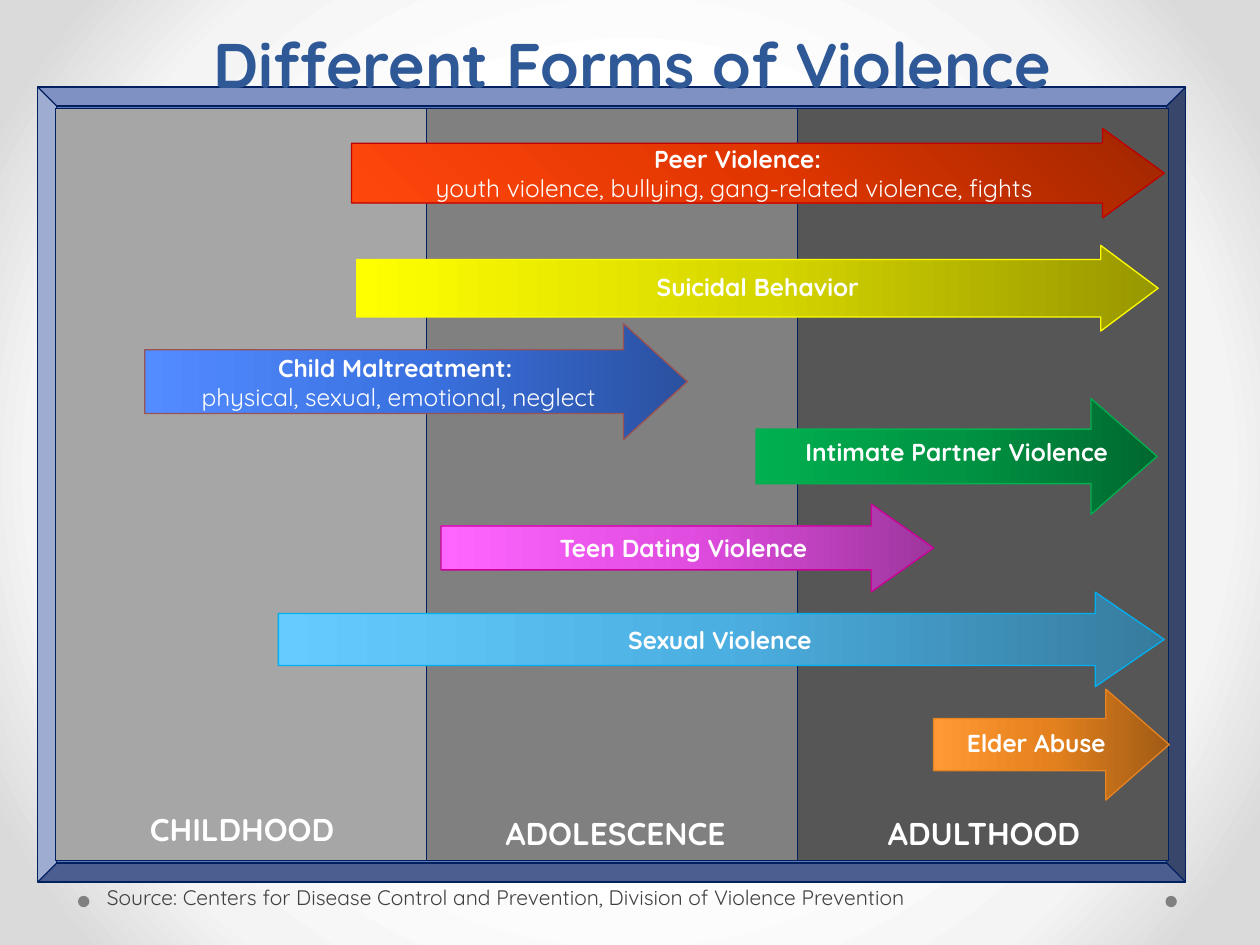
from lxml.etree import SubElement
from pptx import Presentation
from pptx.dml.color import RGBColor
from pptx.enum.shapes import MSO_SHAPE
from pptx.enum.text import MSO_ANCHOR, PP_ALIGN
from pptx.oxml.ns import qn
from pptx.util import Pt

FONT = "Quicksand"
C = {"title": "2F5897", "navy": "002060", "frame": "6076B4", "white": "FFFFFF",
     "source": "404040", "dot": "808080"}

TITLE = "Different Forms of Violence"
SOURCE = ("Source: Centers for Disease Control and Prevention, "
          "Division of Violence Prevention")
BACKGROUND = [(50, "FFFFFF"), (76, "F4F4F4"), (92, "DADADA")]

# Life stages: name, panel colour, label box
STAGES = [
    ("CHILDHOOD", "A6A6A6", (45.4, 459.4, 185.8, 28.8)),
    ("ADOLESCENCE", "808080", (247.7, 461.5, 208, 28.8)),
    ("ADULTHOOD", "565656", (469.4, 461.5, 185.8, 28.8)),
]

# Forms of violence: heading, detail, arrow box, adjustments,
# gradient from head to tail, outline, label box
FORMS = [
    ("Peer Violence:", "youth violence, bullying, gang-related violence, fights ",
     (200.9, 73.4, 464.4, 51.1), (0.67, 0.69),
     ("9F2600", "E23600", "FF470D"), "C00000", (200.9, 78.5, 441.4, 41)),
    ("Suicidal Behavior", None,
     (203.8, 140.2, 458, 49), (0.67, 0.67),
     ("979700", "D7D700", "FFFF00"), "FFFF00", (295.2, 152, 275.8, 24)),
    ("Child Maltreatment: ", "physical, sexual, emotional, neglect",
     (82.8, 185, 310, 66.2), (0.55, 0.55),
     ("2A509F", "3B72E2", "538CFF"), "9C5252", (90, 198, 275.8, 41)),
    ("Intimate Partner Violence", None,
     (432, 227.7, 229.2, 66.2), (0.47, 0.57),
     ("00682F", "009443", "00B050"), "00B050", (450.7, 246.2, 192.2, 24)),
    ("Teen Dating Violence", None,
     (252, 288, 281.5, 50.2), (0.5, 0.71),
     ("9E369E", "E14CE1", "FF66FF"), "CC0099", (252, 301, 277.2, 24)),
    ("Sexual Violence", None,
     (159.1, 338.4, 506.2, 54), (0.55, 0.73),
     ("367B9E", "4CAFE1", "66CCFF"), "00B0F0", (273.6, 353.5, 275.8, 24)),
    ("Elder Abuse", None,
     (533.5, 393.8, 134.6, 63.4), (0.47, 0.57),
     ("A05B15", "E4811E", "FF9933"), "E68422", (529.2, 412.6, 126, 24)),
]

prs = Presentation()
prs.slide_width, prs.slide_height = Pt(720), Pt(540)
s = prs.slides.add_slide(prs.slide_layouts[6])


def set_gradient(fill, owner, stops, angle=None, center=None):
    """Linear gradient at an angle, or circular towards center (l, t, r, b)."""
    fill.gradient()
    grad = owner.xpath(".//a:gradFill")[0]
    for child in list(grad):
        grad.remove(child)
    gs_list = SubElement(grad, qn("a:gsLst"))
    for pos, color in stops:
        gs = SubElement(gs_list, qn("a:gs"), pos=str(pos * 1000))
        SubElement(gs, qn("a:srgbClr"), val=color)
    if center:
        shade = SubElement(grad, qn("a:path"), {"path": "circle"})
        sides = {k: str(v * 1000) for k, v in zip("ltrb", center)}
        SubElement(shade, qn("a:fillToRect"), sides)
    else:
        SubElement(grad, qn("a:lin"), ang=str(angle * 60000), scaled="0")


def add_shape(kind, box, fill=None, line=None, adj=()):
    sp = s.shapes.add_shape(kind, *map(Pt, box))
    sp.shadow.inherit = False
    for i, value in enumerate(adj):
        sp.adjustments[i] = value
    if fill:
        sp.fill.solid()
        sp.fill.fore_color.rgb = RGBColor.from_string(fill)
    if line:
        sp.line.color.rgb = RGBColor.from_string(line)
        sp.line.width = Pt(0.75)
    else:
        sp.line.fill.background()
    return sp


def add_text(box, lines, size, color=C["white"], align=PP_ALIGN.CENTER):
    """Each line is (text, bold)."""
    tf = s.shapes.add_textbox(*map(Pt, box)).text_frame
    tf.word_wrap = True
    for i, (text, bold) in enumerate(lines):
        p = tf.add_paragraph() if i else tf.paragraphs[0]
        p.alignment = align
        r = p.add_run()
        r.text = text
        r.font.name, r.font.size, r.font.bold = FONT, Pt(size), bold
        r.font.color.rgb = RGBColor.from_string(color)
    return tf


# Background and footer dots
set_gradient(s.background.fill, s.background._cSld, BACKGROUND, center=(50,) * 4)
for x in (44.6, 666):
    add_shape(MSO_SHAPE.OVAL, (x, 511.9, 6.5, 6.5), C["dot"])

# Frame and life-stage panels
add_shape(MSO_SHAPE.BEVEL, (21.6, 49.7, 656, 454.3), C["frame"], C["navy"], (0.024,))
PANEL_X, PANEL_W = 31.7, 212
for i, (name, color, label_box) in enumerate(STAGES):
    add_shape(MSO_SHAPE.RECTANGLE, (PANEL_X + i * PANEL_W, 61.9, PANEL_W, 430),
              color, C["navy"])
    add_text(label_box, [(name, True)], 18)

# Arrows with their labels
for heading, detail, box, adj, colors, outline, label_box in FORMS:
    sp = add_shape(MSO_SHAPE.RIGHT_ARROW, box, line=outline, adj=adj)
    center = (100, 0, 0, 100) if heading.startswith("Peer") else None
    set_gradient(sp.fill, sp._element.spPr, zip((0, 50, 100), colors), 180, center)
    lines = [(heading, True)] + ([(detail, False)] if detail else [])
    add_text(label_box, lines, 14)

# Source and title
add_text((54, 501.8, 614, 21.6), [(SOURCE, False)], 12, C["source"], PP_ALIGN.LEFT)
tf = add_text((37.4, 0, 648, 61.5), [(TITLE, True)], 36, C["title"])
tf.vertical_anchor = MSO_ANCHOR.BOTTOM
tf.paragraphs[0].line_spacing = Pt(58)

prs.save("out.pptx")
